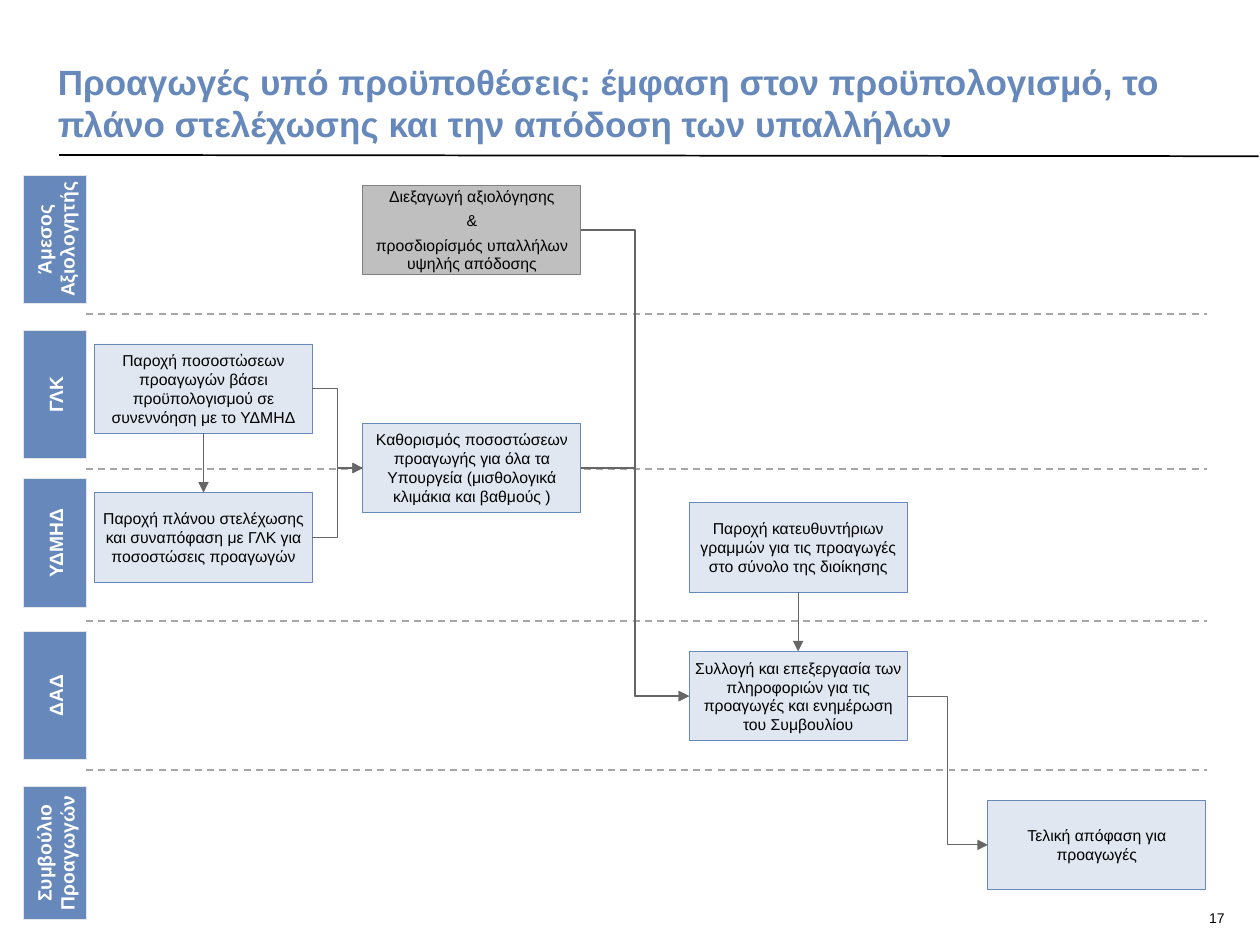
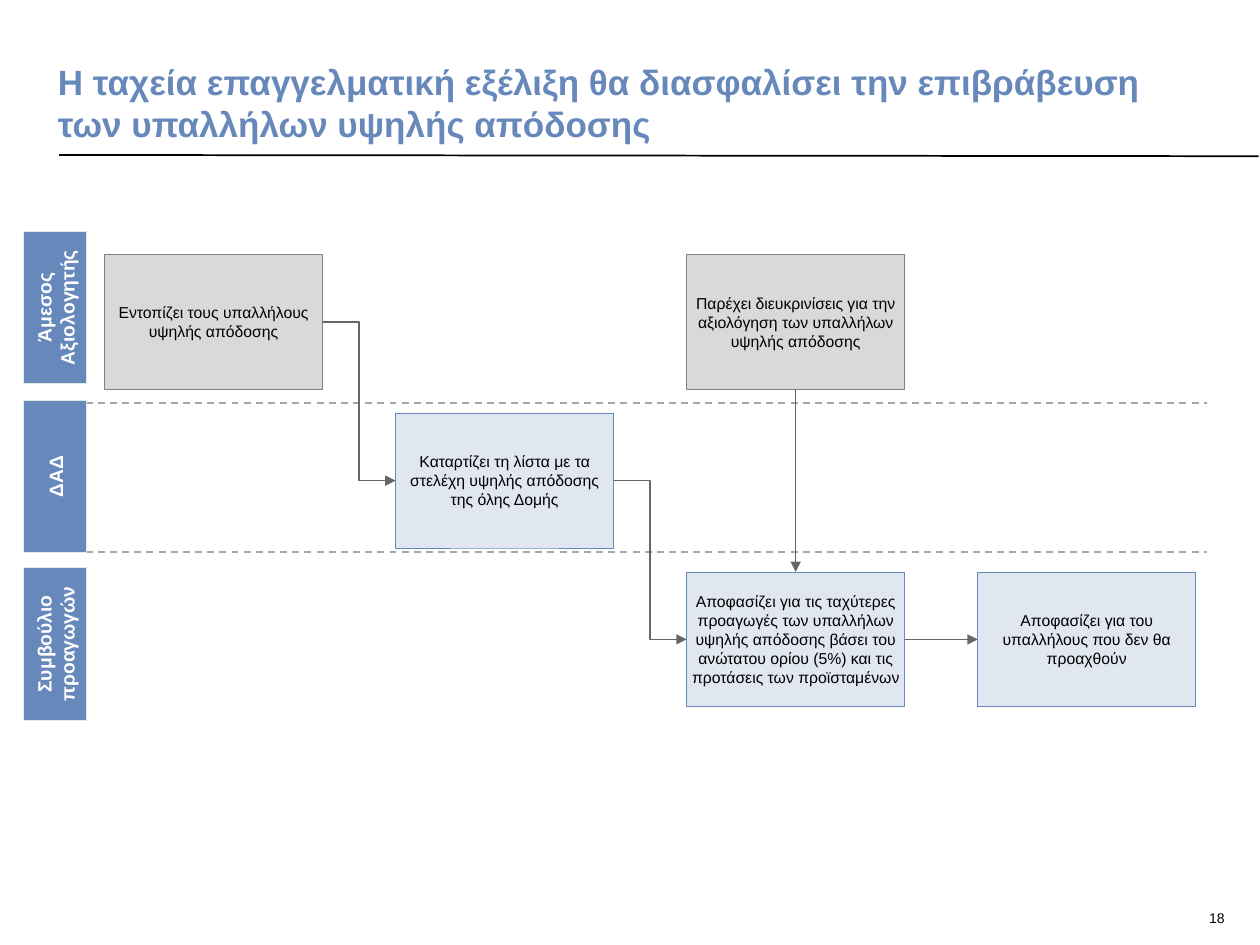
from dataclasses import dataclass

from lxml.etree import SubElement
from pptx import Presentation
from pptx.dml.color import RGBColor
from pptx.enum.dml import MSO_LINE
from pptx.enum.shapes import MSO_CONNECTOR, MSO_SHAPE
from pptx.enum.text import MSO_ANCHOR, PP_ALIGN
from pptx.oxml.ns import qn
from pptx.shapes.autoshape import Shape
from pptx.shapes.connector import Connector
from pptx.slide import Slide
from pptx.util import Inches, Pt

FONT = "Arial"
BLUE = "6688BB"
PALE_BLUE = "E0E7F1"
LIGHT_GREY = "D9D9D9"
MID_GREY = "BFBFBF"
BOX_GREY = "808080"
LANE_EDGE = "E4E7E7"
DIVIDER_GREY = "A6A6A6"
ARROW_GREY = "666666"
BLACK = "000000"
WHITE = "FFFFFF"

LANE_CENTRE = 0.44
LANE_THICKNESS = 0.5
STEP_WIDTH = 1.73
TOP, LEFT, BOTTOM, RIGHT = range(4)


@dataclass(frozen=True)
class Lane:
    label: str
    middle: float
    length: float


@dataclass(frozen=True)
class Step:
    text: str
    left: float
    top: float
    fill: str = PALE_BLUE
    edge: str = BLUE


@dataclass(frozen=True)
class Flow:
    source: str
    target: str
    downward: bool = False
    elbow: bool = True


@dataclass(frozen=True)
class Process:
    title: str
    number: int
    step_height: float
    lanes: list[Lane]
    dividers: list[float]
    steps: dict[str, Step]
    flows: list[Flow]


PROMOTIONS = Process(
    title="Προαγωγές υπό προϋποθέσεις: έμφαση στον προϋπολογισμό, το "
    "πλάνο στελέχωσης και την απόδοση των υπαλλήλων",
    number=17,
    step_height=0.71,
    lanes=[
        Lane("Άμεσος Αξιολογητής", 1.9, 1.02),
        Lane("ΓΛΚ", 3.13, 1.02),
        Lane("ΥΔΜΗΔ", 4.31, 1.02),
        Lane("ΔΑΔ", 5.52, 1.02),
        Lane("Συμβούλιο Προαγωγών", 6.77, 1.05),
    ],
    dividers=[2.49, 3.72, 4.93, 6.11],
    steps={
        "appraisal": Step(
            "Διεξαγωγή αξιολόγησης\n&\nπροσδιορίσμός υπαλλήλων υψηλής απόδοσης",
            2.88, 1.47, MID_GREY, BOX_GREY,
        ),
        "budget": Step(
            "Παροχή ποσοστὠσεων προαγωγών βάσει προϋπολογισμού σε "
            "συνεννόηση με το ΥΔΜΗΔ",
            0.75, 2.73,
        ),
        "staffing": Step(
            "Παροχή πλάνου στελέχωσης και συναπόφαση με ΓΛΚ για "
            "ποσοστώσεις προαγωγών",
            0.75, 3.91,
        ),
        "quotas": Step(
            "Καθορισμός ποσοστώσεων προαγωγής για όλα τα Υπουργεία "
            "(μισθολογικά κλιμάκια και βαθμούς )",
            2.88, 3.36,
        ),
        "guidelines": Step(
            "Παροχή κατευθυντήριων γραμμών για τις προαγωγές στο σύνολο "
            "της διοίκησης",
            5.47, 3.99,
        ),
        "collection": Step(
            "Συλλογή και επεξεργασία των πληροφοριών για τις προαγωγές "
            "και ενημέρωση του Συμβουλίου",
            5.47, 5.17,
        ),
        "decision": Step("Τελική απόφαση για προαγωγές", 7.84, 6.35),
    },
    flows=[
        Flow("budget", "staffing", downward=True, elbow=False),
        Flow("budget", "quotas"),
        Flow("staffing", "quotas"),
        Flow("appraisal", "collection"),
        Flow("quotas", "collection"),
        Flow("guidelines", "collection", downward=True, elbow=False),
        Flow("collection", "decision"),
    ],
)

FAST_TRACK = Process(
    title="Η ταχεία επαγγελματική εξέλιξη θα διασφαλίσει την επιβράβευση "
    "των υπαλλήλων υψηλής απόδοσης",
    number=18,
    step_height=1.07,
    lanes=[
        Lane("Άμεσος Αξιολογητής", 2.44, 1.21),
        Lane("ΔΑΔ", 3.78, 1.21),
        Lane("Συμβούλιο προαγωγών", 5.11, 1.21),
    ],
    dividers=[3.2, 4.38],
    steps={
        "spotting": Step(
            "Εντοπίζει τους υπαλλήλους υψηλής απόδοσης",
            0.83, 2.02, LIGHT_GREY, BOX_GREY,
        ),
        "list": Step(
            "Καταρτίζει τη λίστα με τα στελέχη υψηλής απόδοσης της όλης Δομής",
            3.14, 3.28,
        ),
        "clarification": Step(
            "Παρέχει διευκρινίσεις για την αξιολόγηση των υπαλλήλων "
            "υψηλής απόδοσης",
            5.45, 2.02, LIGHT_GREY, BOX_GREY,
        ),
        "promotion": Step(
            "Αποφασίζει για τις ταχύτερες προαγωγές των υπαλλήλων υψηλής "
            "απόδοσης βάσει του ανώτατου ορίου (5%) και τις προτάσεις των "
            "προϊσταμένων",
            5.45, 4.54,
        ),
        "rejection": Step(
            "Αποφασίζει για του υπαλλήλους που δεν θα προαχθούν", 7.76, 4.54
        ),
    },
    flows=[
        Flow("spotting", "list"),
        Flow("clarification", "promotion", downward=True, elbow=False),
        Flow("promotion", "rejection", elbow=False),
        Flow("list", "promotion"),
    ],
)


def colour(value: str) -> RGBColor:
    return RGBColor.from_string(value)


def write(
    box: Shape,
    text: str,
    size: float,
    ink: str,
    bold: bool = False,
    align: PP_ALIGN = PP_ALIGN.CENTER,
    anchor: MSO_ANCHOR = MSO_ANCHOR.MIDDLE,
    inset_x: float = 0,
    inset_y: float = 0,
    space_after: float = 0,
) -> None:
    frame = box.text_frame
    frame.text = text
    frame.word_wrap = True
    frame.vertical_anchor = anchor
    frame.margin_left = frame.margin_right = Inches(inset_x)
    frame.margin_top = frame.margin_bottom = Inches(inset_y)
    for paragraph in frame.paragraphs:
        paragraph.alignment = align
        paragraph.space_after = Pt(space_after)
        paragraph.font.name = FONT
        paragraph.font.size = Pt(size)
        paragraph.font.bold = bold
        paragraph.font.color.rgb = colour(ink)


def add_text(
    page: Slide, left: float, top: float, width: float, height: float
) -> Shape:
    return page.shapes.add_textbox(
        Inches(left), Inches(top), Inches(width), Inches(height)
    )


def add_rectangle(
    page: Slide,
    left: float,
    top: float,
    width: float,
    height: float,
    fill: str,
    edge: str,
) -> Shape:
    box = page.shapes.add_shape(
        MSO_SHAPE.RECTANGLE,
        Inches(left), Inches(top), Inches(width), Inches(height),
    )
    box.shadow.inherit = False
    box.fill.solid()
    box.fill.fore_color.rgb = colour(fill)
    box.line.color.rgb = colour(edge)
    box.line.width = Pt(0.5)
    return box


def add_line(
    page: Slide,
    start: tuple[float, float],
    end: tuple[float, float],
    ink: str,
    weight: float,
    kind: MSO_CONNECTOR = MSO_CONNECTOR.STRAIGHT,
) -> Connector:
    line = page.shapes.add_connector(
        kind, *(Inches(value) for value in (*start, *end))
    )
    line.line.color.rgb = colour(ink)
    line.line.width = Pt(weight)
    SubElement(line._element.spPr, qn("a:effectLst"))
    return line


def add_frame(page: Slide, title: str, number: int) -> None:
    add_line(page, (0.47, 1.23), (9.99, 1.24), BLACK, 1)
    write(add_text(page, 9.29, 7.18, 0.43, 0.25), str(number), 8, BLACK,
          align=PP_ALIGN.RIGHT, anchor=MSO_ANCHOR.TOP, inset_y=0.04)
    write(add_text(page, 0.46, 0.2, 9.06, 0.95), title, 20, BLUE, bold=True,
          align=PP_ALIGN.LEFT, anchor=MSO_ANCHOR.BOTTOM)


def add_divider(page: Slide, height: float) -> None:
    line = add_line(page, (0.68, height), (9.58, height), DIVIDER_GREY, 1)
    line.line.dash_style = MSO_LINE.DASH


def add_lane(page: Slide, lane: Lane) -> None:
    box = add_rectangle(
        page, LANE_CENTRE - lane.length / 2, lane.middle - LANE_THICKNESS / 2,
        lane.length, LANE_THICKNESS, BLUE, LANE_EDGE,
    )
    box.rotation = 270
    write(box, lane.label, 11, WHITE, bold=True, space_after=3)


def add_step(page: Slide, step: Step, height: float) -> Shape:
    box = add_rectangle(
        page, step.left, step.top, STEP_WIDTH, height, step.fill, step.edge
    )
    write(box, step.text, 9, BLACK, inset_x=0.04, inset_y=0.08, space_after=3)
    return box


def add_flow(page: Slide, flow: Flow, boxes: dict[str, Shape]) -> None:
    kind = MSO_CONNECTOR.ELBOW if flow.elbow else MSO_CONNECTOR.STRAIGHT
    arrow = add_line(page, (0, 0), (0, 0), ARROW_GREY, 0.75, kind)
    leave, enter = (BOTTOM, TOP) if flow.downward else (RIGHT, LEFT)
    arrow.begin_connect(boxes[flow.source], leave)
    arrow.end_connect(boxes[flow.target], enter)
    SubElement(arrow.line._get_or_add_ln(), qn("a:tailEnd"), type="triangle")


def add_process(page: Slide, process: Process) -> None:
    add_frame(page, process.title, process.number)
    for height in process.dividers:
        add_divider(page, height)
    for lane in process.lanes:
        add_lane(page, lane)
    boxes = {
        name: add_step(page, step, process.step_height)
        for name, step in process.steps.items()
    }
    for flow in process.flows:
        add_flow(page, flow, boxes)


def main() -> None:
    deck = Presentation()
    deck.slide_width, deck.slide_height = Inches(10), Inches(7.5)
    for process in (PROMOTIONS, FAST_TRACK):
        add_process(deck.slides.add_slide(deck.slide_layouts[6]), process)
    deck.save("out.pptx")


if __name__ == "__main__":
    main()
